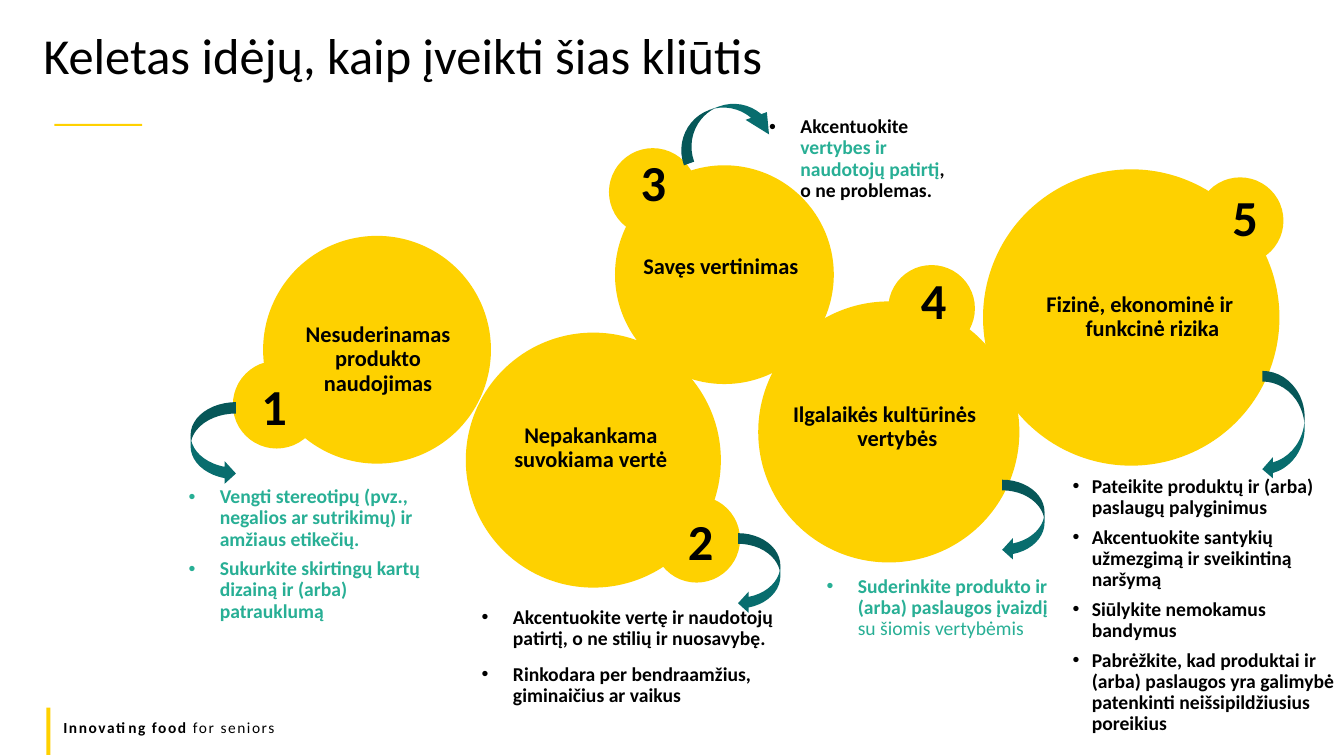
from dataclasses import dataclass
from typing import NamedTuple

from lxml.etree import SubElement
from pptx import Presentation
from pptx.dml.color import RGBColor
from pptx.enum.shapes import MSO_SHAPE
from pptx.enum.text import MSO_ANCHOR, MSO_AUTO_SIZE, PP_ALIGN
from pptx.oxml.ns import qn
from pptx.util import Emu, Pt

PX = 9144  # 100 px to the inch


@dataclass(frozen=True)
class Theme:
    font: str = "Calibri"
    yellow: str = "FED100"
    accent: str = "FFD100"
    teal: str = "086D6E"
    green: str = "28AF95"
    black: str = "000000"
    heading_size: int = 36
    label_size: int = 16
    list_size: int = 14
    footer_size: int = 11


THEME = Theme()


class Box(NamedTuple):
    left: int
    top: int
    width: int
    height: int


class Circle(NamedTuple):
    left: int
    top: int
    diameter: int


class Words(NamedTuple):
    text: str
    color: str = THEME.black
    bold: bool = True


class Arrow(NamedTuple):
    box: Box
    flip: str = ""
    rotation: int = 0
    adjustments: tuple[float, ...] = ()


@dataclass(frozen=True)
class Barrier:
    circle: Circle
    badge: Circle
    number_at: tuple[int, int]
    label: str
    label_box: Box
    hanging: int
    ideas: list[list[Words]]
    ideas_box: Box
    bullet_indent: int
    gap: int
    arrow: Arrow


BARRIERS = [
    Barrier(
        Circle(261, 234, 226), Circle(231, 358, 87), (234, 374),
        "Nesuderinamas produkto naudojimas", Box(281, 316, 188, 48), 0,
        [[Words("Vengti stereotipų (pvz., negalios ar sutrikimų) ir amžiaus etikečių.", THEME.green)],
         [Words("Sukurkite skirtingų kartų dizainą ir (arba) patrauklumą", THEME.green)]],
        Box(177, 478, 260, 169), 31, 6, Arrow(Box(189, 399, 45, 82))),
    Barrier(
        Circle(462, 330, 253), Circle(648, 492, 86), (657, 508),
        "Nepakankama suvokiama vertė", Box(492, 416, 188, 48), 0,
        [[Words("Akcentuokite vertę ir naudotojų patirtį, o ne stilių ir nuosavybę.")],
         [Words("Rinkodara per bendraamžius, giminaičius ar vaikus")]],
        Box(468, 598, 327, 119), 31, 10, Arrow(Box(732, 529, 42, 80), "flipH")),
    Barrier(
        Circle(610, 164, 217), Circle(604, 147, 87), (610, 152),
        "Savęs vertinimas", Box(620, 248, 190, 35), 0,
        [[Words("Akcentuokite "), Words("vertybes ir naudotojų patirtį", THEME.green),
          Words(", o ne problemas.")]],
        Box(753, 111, 199, 88), 31, 10,
        Arrow(Box(697, 76, 43, 101), "flipV", 70, (0.25, 0.523, 0.5))),
    Barrier(
        Circle(752, 299, 259), Circle(881, 263, 86), (888, 269),
        "Ilgalaikės kultūrinės vertybės", Box(761, 395, 233, 39), 25,
        [[Words("Suderinkite produkto ir (arba) paslaugos įvaizdį ", THEME.green),
          Words("su šiomis vertybėmis", THEME.green, False)]],
        Box(810, 567, 244, 101), 31, 10, Arrow(Box(994, 476, 42, 80), "flipH")),
    Barrier(
        Circle(975, 168, 294), Circle(1187, 176, 86), (1197, 187),
        "Fizinė, ekonominė ir funkcinė rizika", Box(1003, 286, 255, 44), 25,
        [[Words("Pateikite produktų ir (arba) paslaugų palyginimus")],
         [Words("Akcentuokite santykių užmezgimą ir sveikintiną naršymą")],
         [Words("Siūlykite nemokamus bandymus")],
         [Words("Pabrėžkite, kad produktai ir (arba) paslaugos yra galimybė "
                "patenkinti neišsipildžiusius poreikius")]],
        Box(1054, 468, 280, 160), 19, 6, Arrow(Box(1252, 368, 42, 108), "flipH")),
]


def emu(box: Box) -> list[Emu]:
    return [Emu(length * PX) for length in box]


def place(holder, box: Box) -> None:
    holder.left, holder.top, holder.width, holder.height = emu(box)


def add_filled(slide, preset: MSO_SHAPE, box: Box, color: str):
    shape = slide.shapes.add_shape(preset, *emu(box))
    shape.shadow.inherit = False
    shape.fill.solid()
    shape.fill.fore_color.rgb = RGBColor.from_string(color)
    shape.line.fill.background()
    return shape


def add_circle(slide, circle: Circle) -> None:
    add_filled(slide, MSO_SHAPE.OVAL, Box(*circle, circle.diameter), THEME.yellow)


def add_arrow(slide, arrow: Arrow) -> None:
    shape = add_filled(slide, MSO_SHAPE.CURVED_RIGHT_ARROW, arrow.box, THEME.teal)
    shape.rotation = arrow.rotation
    for index, value in enumerate(arrow.adjustments):
        shape.adjustments[index] = value
    if arrow.flip:
        shape._element.spPr.get_or_add_xfrm().set(arrow.flip, "1")


def write(holder, paragraphs: list[list[Words]], size: int, align: PP_ALIGN = PP_ALIGN.LEFT,
          spacing: float = 0.9, gap: int = 0, indent: int = 0, bullet: str = "",
          tracking: int = 0, anchor: MSO_ANCHOR = MSO_ANCHOR.TOP) -> None:
    frame = holder.text_frame
    frame.word_wrap = True
    frame.auto_size = MSO_AUTO_SIZE.NONE
    frame.vertical_anchor = anchor
    for index, words in enumerate(paragraphs):
        paragraph = frame.add_paragraph() if index else frame.paragraphs[0]
        paragraph.alignment = align
        paragraph.line_spacing = spacing
        paragraph.space_before = Pt(gap if index else 0)
        properties = paragraph._p.get_or_add_pPr()
        properties.set("marL", str(indent * PX))
        properties.set("indent", str(-indent * PX))
        if bullet:
            SubElement(properties, qn("a:buFont")).set("typeface", "Arial")
            SubElement(properties, qn("a:buChar")).set("char", bullet)
        for text, color, bold in words:
            run = paragraph.add_run()
            run.text = text
            run.font.name = THEME.font
            run.font.size = Pt(size)
            run.font.bold = bold
            run.font.color.rgb = RGBColor.from_string(color)
            if tracking:
                run._r.get_or_add_rPr().set("spc", str(tracking))


def add_text(slide, box: Box, paragraphs: list[list[Words]], size: int, **layout) -> None:
    write(slide.shapes.add_textbox(*emu(box)), paragraphs, size, **layout)


def main() -> None:
    deck = Presentation()
    deck.slide_width, deck.slide_height = Emu(1333 * PX), Emu(750 * PX)
    slide = deck.slides.add_slide(deck.slide_layouts[1])

    # Title, underline and footer
    title = slide.shapes.title
    place(title, Box(33, 28, 1174, 64))
    write(title, [[Words("Keletas idėjų, kaip įveikti šias kliūtis", bold=False)]],
          THEME.heading_size, spacing=0.8, anchor=MSO_ANCHOR.MIDDLE)
    for rule in (Box(54, 123, 87, 2), Box(46, 702, 4, 47)):
        add_filled(slide, MSO_SHAPE.RECTANGLE, rule, THEME.accent)
    add_text(slide, Box(53, 707, 1200, 29),
             [[Words("Innovating food "), Words("for seniors", bold=False)]],
             THEME.footer_size, spacing=1.0, tracking=110)

    # Circles with their number badges
    for barrier in BARRIERS:
        add_circle(slide, barrier.circle)
        add_circle(slide, barrier.badge)

    # Numbers, barrier names, arrows and ideas
    for number, barrier in enumerate(BARRIERS, start=1):
        add_text(slide, Box(*barrier.number_at, 76, 80), [[Words(str(number))]],
                 THEME.heading_size, align=PP_ALIGN.CENTER)
        add_text(slide, barrier.label_box, [[Words(barrier.label)]], THEME.label_size,
                 align=PP_ALIGN.CENTER, indent=barrier.hanging)
        add_arrow(slide, barrier.arrow)
        if number == 1:
            ideas = slide.placeholders[1]
            place(ideas, barrier.ideas_box)
        else:
            ideas = slide.shapes.add_textbox(*emu(barrier.ideas_box))
        write(ideas, barrier.ideas, THEME.list_size, gap=barrier.gap,
              indent=barrier.bullet_indent, bullet="•")

    deck.save("out.pptx")


if __name__ == "__main__":
    main()
